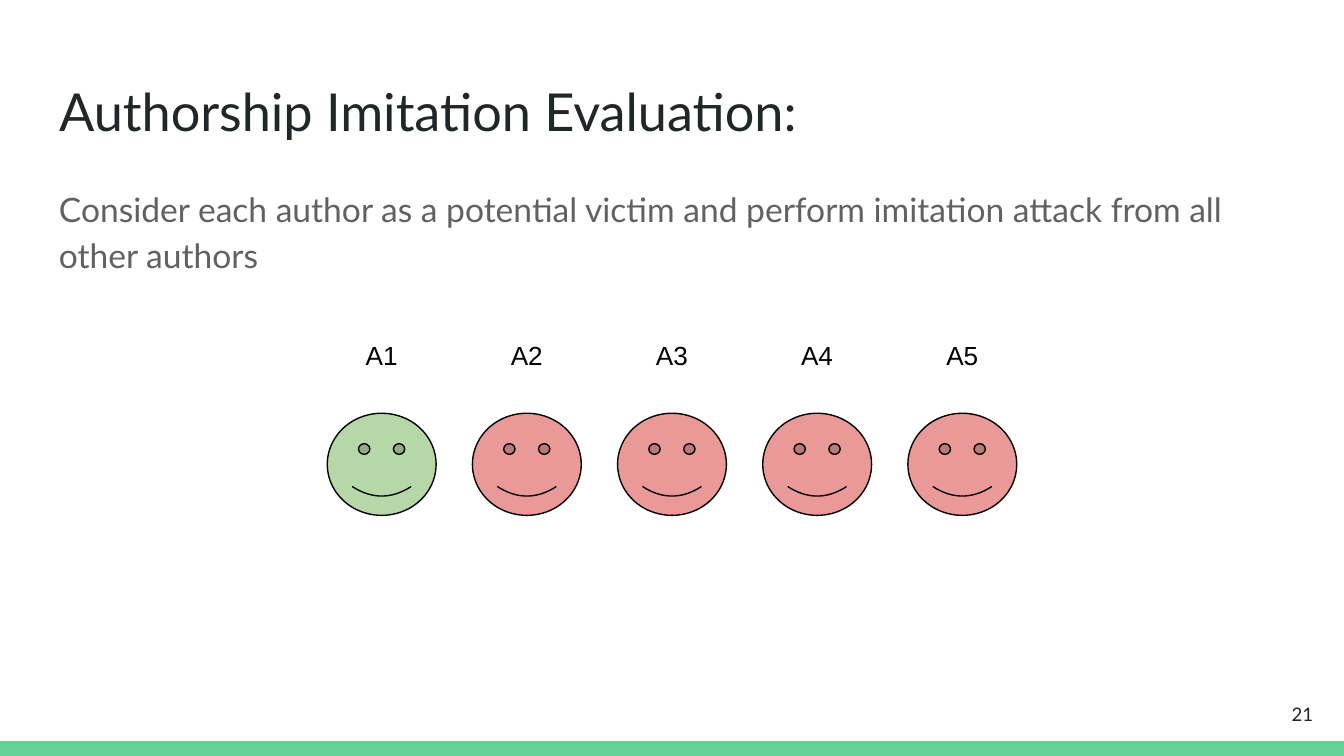
from pptx import Presentation
from pptx.dml.color import RGBColor
from pptx.enum.shapes import MSO_SHAPE
from pptx.enum.text import MSO_ANCHOR, MSO_AUTO_SIZE, PP_ALIGN
from pptx.util import Inches, Pt

RECTANGLE, SMILEY = MSO_SHAPE.RECTANGLE, MSO_SHAPE.SMILEY_FACE
TOP, MIDDLE = MSO_ANCHOR.TOP, MSO_ANCHOR.MIDDLE
LEFT, CENTER, RIGHT = PP_ALIGN.LEFT, PP_ALIGN.CENTER, PP_ALIGN.RIGHT
NO_AUTOFIT = MSO_AUTO_SIZE.NONE
TITLE_ONLY = 5

COLORS = {
    "bar": "63D297",
    "title": "202729",
    "body": "616161",
    "black": "000000",
    "victim": "B6D7A8",
    "attacker": "EA9999",
}
AUTHORS = ["A1", "A2", "A3", "A4", "A5"]
SLIDE_WIDTH = 10
SLIDE_HEIGHT = SLIDE_WIDTH * 9 / 16
BAR_HEIGHT = 0.11
FACE_WIDTH, FACE_HEIGHT, FACE_MIDDLE = 0.81, 0.76, 3.455
LABEL_WIDTH, LABEL_HEIGHT, LABEL_MIDDLE = 0.57, 0.61, 2.73
AUTHOR_PITCH = 1.08


def color(name):
    return RGBColor.from_string(COLORS[name])


def write_text(shape, text, size, color_name, font="Lato", align=LEFT,
               anchor=TOP, line_spacing=1.0):
    frame = shape.text_frame
    frame.word_wrap = True
    frame.auto_size = NO_AUTOFIT
    frame.vertical_anchor = anchor
    frame.margin_left = frame.margin_right = Inches(0.1)
    frame.margin_top = frame.margin_bottom = Inches(0.1)
    paragraph = frame.paragraphs[0]
    paragraph.alignment = align
    paragraph.line_spacing = line_spacing
    paragraph.space_before = Pt(0)
    run = paragraph.add_run()
    run.text = text
    run.font.name = font
    run.font.size = Pt(size)
    run.font.color.rgb = color(color_name)


def add_title(slide, text, left, top, width, height):
    title = slide.shapes.title
    title.left, title.top = Inches(left), Inches(top)
    title.width, title.height = Inches(width), Inches(height)
    write_text(title, text, 28, "title")


def add_text(slide, text, left, top, width, height, size, color_name, **style):
    box = slide.shapes.add_textbox(
        Inches(left), Inches(top), Inches(width), Inches(height))
    write_text(box, text, size, color_name, **style)


def add_filled_shape(slide, kind, left, top, width, height, fill, line=None):
    shape = slide.shapes.add_shape(
        kind, Inches(left), Inches(top), Inches(width), Inches(height))
    shape.shadow.inherit = False
    shape.fill.solid()
    shape.fill.fore_color.rgb = color(fill)
    if line:
        shape.line.color.rgb = color(line)
        shape.line.width = Pt(0.75)
    else:
        shape.line.fill.background()


def add_author(slide, name, center, fill):
    add_filled_shape(slide, SMILEY, center - FACE_WIDTH / 2,
                     FACE_MIDDLE - FACE_HEIGHT / 2,
                     FACE_WIDTH, FACE_HEIGHT, fill, "black")
    add_text(slide, name, center - LABEL_WIDTH / 2,
             LABEL_MIDDLE - LABEL_HEIGHT / 2, LABEL_WIDTH, LABEL_HEIGHT,
             14, "black", font="Arial", align=CENTER)


def main():
    presentation = Presentation()
    presentation.slide_width = Inches(SLIDE_WIDTH)
    presentation.slide_height = Inches(SLIDE_HEIGHT)
    slide = presentation.slides.add_slide(presentation.slide_layouts[TITLE_ONLY])

    # Bottom bar
    add_filled_shape(slide, RECTANGLE, 0, SLIDE_HEIGHT - BAR_HEIGHT,
                     SLIDE_WIDTH, BAR_HEIGHT, "bar")

    # Title and explanation
    add_title(slide, "Authorship Imitation Evaluation:", 0.34, 0.49, 9.32, 0.63)
    add_text(slide, "Consider each author as a potential victim and perform "
             "imitation attack from all other authors",
             0.34, 1.26, 9.32, 3.74, 18, "body", line_spacing=1.15)

    # Row of authors, centred on the slide: one victim, then the attackers
    first_center = SLIDE_WIDTH / 2 - AUTHOR_PITCH * (len(AUTHORS) - 1) / 2
    for index, name in enumerate(AUTHORS):
        fill = "victim" if index == 0 else "attacker"
        add_author(slide, name, first_center + index * AUTHOR_PITCH, fill)

    # Slide number
    add_text(slide, "21", 9.27, 5.1, 0.6, 0.43, 10, "title",
             align=RIGHT, anchor=MIDDLE)

    presentation.save("out.pptx")


if __name__ == "__main__":
    main()
